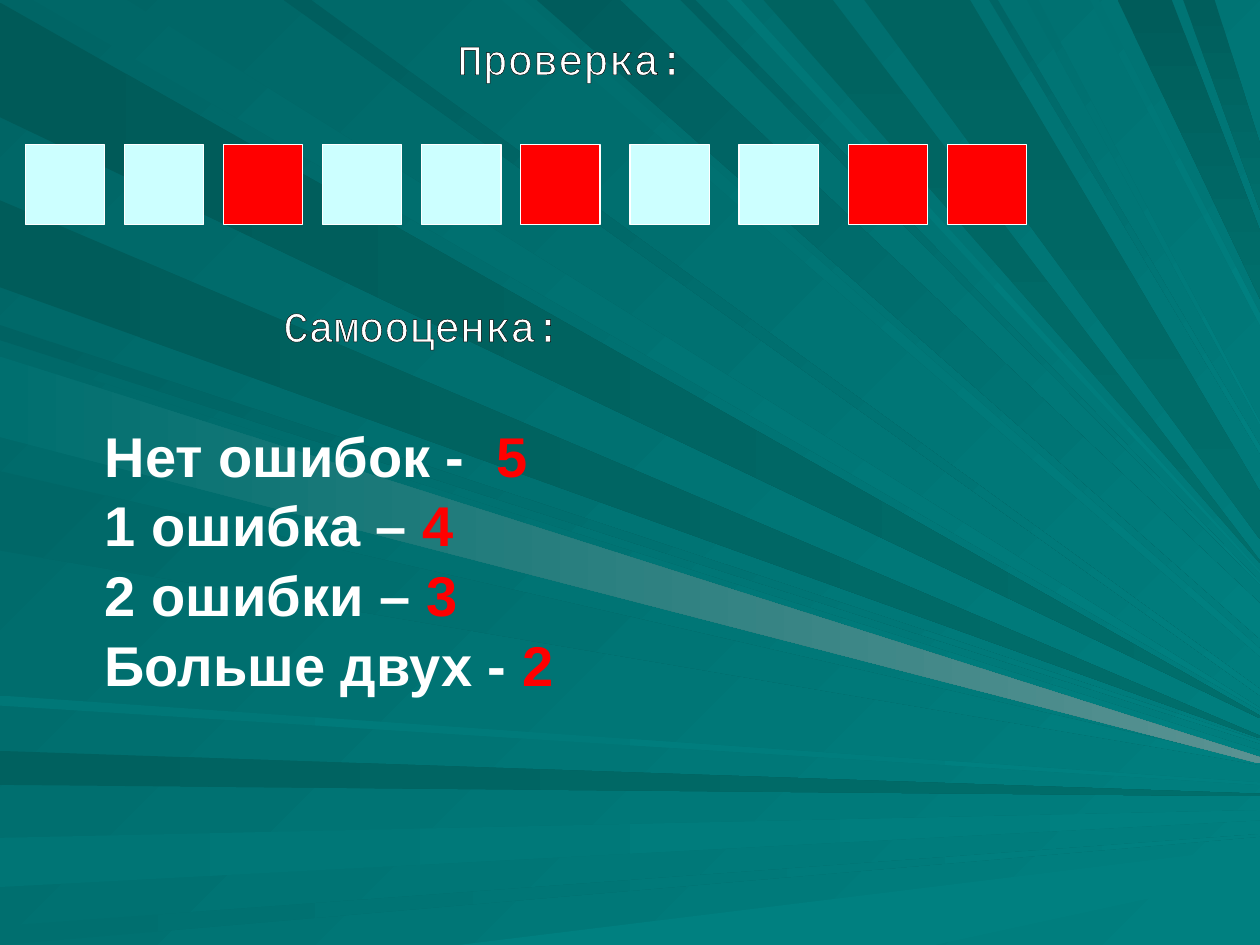
import pptx
import pptx.dml.color
import pptx.enum.shapes
import pptx.enum.text
import pptx.util
from lxml import etree

WIDTH, HEIGHT = 10, 7.5
WHITE, RED, PALE = "FFFFFF", "FF0000", "CCFFFF"
DEEP, TEAL, GLOW = "006E6B", "008080", "5A9292"

HEADINGS = {
    "check": ("Проверка:", (3.19, 0.21, 2.68, 0.75)),
    "self_grade": ("Самооценка:", (2.01, 2.33, 2.68, 0.75)),
}
GRADES = [
    ("Нет ошибок - ", " 5"),
    ("1 ошибка – ", "4"),
    ("2 ошибки – ", "3"),
    ("Больше двух -", " 2"),
]
GRADES_BOX = (0.73, 3.27, 3.78, 2.23)

ANSWERS = [PALE, PALE, RED, PALE, PALE, RED, PALE, PALE, RED, RED]
FIRST_LEFT, LAST_LEFT, ANSWER_TOP, ANSWER_SIDE = 0.2, 7.52, 1.15, 0.63
WIDER_GAPS, EXTRA_GAP = (6, 7, 8), 0.08

ACROSS, DIAGONAL = (TEAL, 0), (TEAL, 45)
DEEP_ACROSS, DEEP_DOWN = (DEEP, 0), (DEEP, 90)
GLOWING = (GLOW, 0)
THIN = 0.02
RAYS = [
    ("left", 0.02, 0.93, 5.68, THIN, "005A58", DEEP_ACROSS),
    ("top", 0.26, 1.01, 5.62, THIN, "006767", DIAGONAL),
    ("left", 5.96, 6.23, 6.3, THIN, "00615F", DEEP_ACROSS),
    ("left", 6.65, 7.04, 6.43, 0.08, "007575", ACROSS),
    ("left", 7.35, 7.5, 6.62, THIN, "006F6F", ACROSS),
    ("bottom", 3.64, 7.42, 6.72, 0.22, TEAL, ACROSS),
    ("left", 2.58, 2.7, 5.88, THIN, "006262", DIAGONAL),
    ("left", 1.59, 2.28, 5.84, THIN, "005C5A", DEEP_ACROSS),
    ("top", 3.98, 4.16, 5.15, 0.06, "006D6D", DIAGONAL),
    ("top", 4.26, 4.92, 4.79, 0.28, "005C5C", DIAGONAL),
    ("top", 5.4, 5.52, 4.62, THIN, "006060", DIAGONAL),
    ("top", 6.06, 6.61, 4.45, THIN, "006360", DEEP_DOWN),
    ("top", 8.87, 9.3, 1.83, 0.54, "005C5A", DEEP_DOWN),
    ("top", 9.39, 9.64, 1.14, 0.53, "005E5C", DEEP_DOWN),
    ("left", 2.78, 3.42, 5.96, 0.06, "006969", DIAGONAL),
    ("left", 3.74, 4.37, 6.05, THIN, "006767", DIAGONAL),
    ("left", 5.52, 5.6, 6.21, THIN, "007777", ACROSS),
    ("top", 2.25, 2.47, 5.47, 0.05, "005E5E", DIAGONAL),
    ("top", 5.77, 5.88, 4.53, THIN, "007777", DIAGONAL),
    ("top", 6.86, 7.7, 3.9, 0.38, "006360", DEEP_DOWN),
    ("top", 7.85, 7.92, 3.54, 0.06, "006565", DIAGONAL),
    ("top", 8.15, 8.24, 3.35, THIN, "006F6F", DIAGONAL),
    ("top", 8.65, 8.72, 2.49, 0.09, "007373", DIAGONAL),
    ("left", 2.83, 3.47, 6.01, 0.05, "006F6F", GLOWING),
]

FRAME_FORMAT = {
    "word_wrap": False,
    "vertical_anchor": pptx.enum.text.MSO_ANCHOR.TOP,
    "auto_size": pptx.enum.text.MSO_AUTO_SIZE.NONE,
}
HEADING_FONT = {"name": "Courier New", "size": pptx.util.Pt(24), "bold": False}
GRADE_FONT = {"name": "Arial", "size": pptx.util.Pt(32), "bold": True}
GRADE_SPACING = {"space_before": pptx.util.Pt(0), "line_spacing": 1.04}
OUTLINE = (
    '<a:ln xmlns:a="http://schemas.openxmlformats.org/drawingml/2006/main" w="9525">'
    '<a:solidFill><a:srgbClr val="000000"/></a:solidFill></a:ln>'
)
NO_BULLET = '<a:buNone xmlns:a="http://schemas.openxmlformats.org/drawingml/2006/main"/>'


def rgb(value):
    return pptx.dml.color.RGBColor.from_string(value)


def apply(target, values):
    for key, value in values.items():
        setattr(target, key, value)


def inches(values):
    return [pptx.util.Inches(value) for value in values]


def paint(fill, start, end, angle):
    if start == end:
        fill.solid()
        fill.fore_color.rgb = rgb(start)
        return
    fill.gradient()
    fill.gradient_angle = (360 - angle) % 360
    for stop, color in zip(fill.gradient_stops, (start, end)):
        stop.color.rgb = rgb(color)


def place(holder, box):
    apply(holder, dict(zip(("left", "top", "width", "height"), inches(box))))
    apply(holder.text_frame, FRAME_FORMAT)


def add_run(paragraph, text, font, color):
    run = paragraph.add_run()
    run.text = text
    apply(run.font, font)
    run.font.color.rgb = rgb(color)
    return run


def write_heading(holder, text, box):
    place(holder, box)
    paragraph = holder.text_frame.paragraphs[0]
    paragraph.alignment = pptx.enum.text.PP_ALIGN.CENTER
    run = add_run(paragraph, text, HEADING_FONT, WHITE)
    run.font._element.insert(0, etree.fromstring(OUTLINE))


def write_grades(holder):
    place(holder, GRADES_BOX)
    frame = holder.text_frame
    for index, (errors, grade) in enumerate(GRADES):
        paragraph = frame.add_paragraph() if index else frame.paragraphs[0]
        apply(paragraph, GRADE_SPACING)
        properties = paragraph._p.get_or_add_pPr()
        properties.set("marL", "0")
        properties.set("indent", "0")
        properties.append(etree.fromstring(NO_BULLET))
        add_run(paragraph, errors, GRADE_FONT, WHITE)
        add_run(paragraph, grade, GRADE_FONT, RED)


def add_answers(shapes):
    extra = EXTRA_GAP * len(WIDER_GAPS)
    step = (LAST_LEFT - FIRST_LEFT - extra) / (len(ANSWERS) - 1)
    for index, color in enumerate(ANSWERS):
        widened = sum(index >= gap for gap in WIDER_GAPS)
        left = FIRST_LEFT + index * step + widened * EXTRA_GAP
        box = inches((left, ANSWER_TOP, ANSWER_SIDE, ANSWER_SIDE))
        answer = shapes.add_shape(pptx.enum.shapes.MSO_SHAPE.RECTANGLE, *box)
        answer.shadow.inherit = False
        paint(answer.fill, color, color, 0)
        answer.line.color.rgb = rgb(WHITE)
        answer.line.width = pptx.util.Pt(0.75)


def ray_corners(edge, start, end, tip, thickness):
    near = {
        "left": [(0, start), (0, end)],
        "top": [(end, 0), (start, 0)],
        "bottom": [(start, HEIGHT), (end, HEIGHT)],
    }[edge]
    return near + [(WIDTH, tip + thickness), (WIDTH, tip)]


def add_rays(slide, master):
    rays = slide.shapes.add_group_shape()
    for *shape, shade, (end, angle) in RAYS:
        first, *rest = [inches(corner) for corner in ray_corners(*shape)]
        outline = rays.shapes.build_freeform(*first)
        outline.add_line_segments(rest, close=True)
        ray = outline.convert_to_shape()
        ray.shadow.inherit = False
        paint(ray.fill, shade, end, angle)
        ray.line.fill.background()
    master.shapes.element.append(rays.element)


def main():
    deck = pptx.Presentation()
    deck.slide_width, deck.slide_height = inches((WIDTH, HEIGHT))
    master = deck.slide_master
    paint(master.background.fill, "006565", TEAL, 45)
    slide = deck.slides.add_slide(deck.slide_layouts[1])
    add_answers(slide.shapes)
    write_heading(slide.shapes.title, *HEADINGS["check"])
    text, box = HEADINGS["self_grade"]
    write_heading(slide.shapes.add_textbox(*inches(box)), text, box)
    write_grades(slide.placeholders[1])
    add_rays(slide, master)
    deck.save("out.pptx")


if __name__ == "__main__":
    main()
